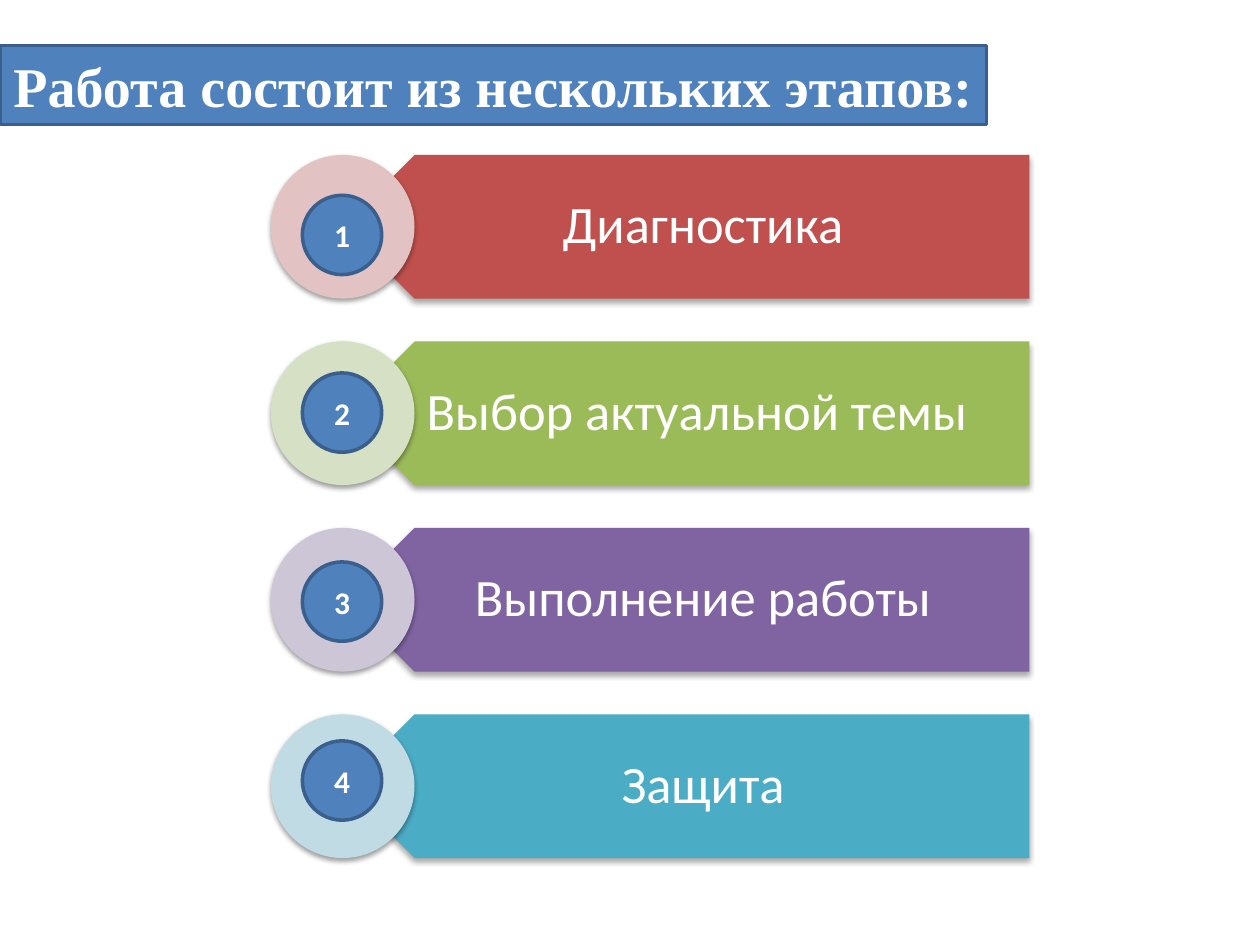
from dataclasses import dataclass

from lxml import etree
from pptx import Presentation
from pptx.dml.color import RGBColor
from pptx.enum.shapes import MSO_SHAPE
from pptx.enum.text import MSO_ANCHOR, PP_ALIGN
from pptx.oxml.ns import qn
from pptx.util import Inches, Pt

RECTANGLE = MSO_SHAPE.RECTANGLE
PENTAGON = MSO_SHAPE.PENTAGON
OVAL = MSO_SHAPE.OVAL
MIDDLE = MSO_ANCHOR.MIDDLE
CENTER = PP_ALIGN.CENTER


@dataclass(frozen=True)
class Theme:
    accent: str = "4F81BD"
    accent_line: str = "3A5F8C"
    text: str = "FFFFFF"
    shadow: str = "000000"
    title_font: str = "Times New Roman"
    body_font: str = "Calibri"
    title_size: int = 32
    stage_size: int = 30
    number_size: int = 18


# label, bar colour, disc colour, top of the number badge
STAGES = [
    ("Диагностика", "C0504D", "E2C2C2", 1.55),
    ("Выбор актуальной темы ", "9BBB59", "D5E0C4", 2.96),
    ("Выполнение работы", "8064A2", "CDC6D7", 4.46),
    ("Защита", "4BACC6", "C1DBE5", 5.88),
]
FIRST_TOP = 1.23
PITCH = 1.48
BAR_LEFT, BAR_WIDTH, BAR_HEIGHT = 2.72, 5.45, 1.14
DISC_LEFT = BAR_LEFT - BAR_HEIGHT / 2
BADGE_LEFT, BADGE_SIZE = 2.4, 0.63


class SlideBuilder:
    def __init__(self, slide, theme):
        self.slide = slide
        self.theme = theme

    def shape(self, kind, box, fill, line=None):
        shape = self.slide.shapes.add_shape(kind, *map(Inches, box))
        shape.fill.solid()
        shape.fill.fore_color.rgb = RGBColor.from_string(fill)
        if line:
            shape.line.color.rgb = RGBColor.from_string(line)
            shape.line.width = Pt(2)
        else:
            shape.line.fill.background()
        shape.shadow.inherit = False
        return shape

    def drop_shadow(self, shape, distance, opacity):
        """Cast a soft shadow straight down; opacity is in percent."""
        effects = shape._element.spPr.find(qn("a:effectLst"))
        shadow = etree.SubElement(
            effects, qn("a:outerShdw"), blurRad=str(Pt(3.1)),
            dist=str(Pt(distance)), dir="5400000", rotWithShape="0")
        color = etree.SubElement(shadow, qn("a:srgbClr"), val=self.theme.shadow)
        etree.SubElement(color, qn("a:alpha"), val=str(opacity * 1000))

    def set_text(self, shape, text, font, size, bold=False):
        """Put one centred line of text in the shape and return its paragraph."""
        frame = shape.text_frame
        frame.text = text
        frame.vertical_anchor = MIDDLE
        paragraph = frame.paragraphs[0]
        paragraph.alignment = CENTER
        for run in paragraph.runs:
            run.font.name = font
            run.font.size = Pt(size)
            run.font.bold = bold
            run.font.color.rgb = RGBColor.from_string(self.theme.text)
        return paragraph

    def title(self, text):
        theme = self.theme
        banner = self.shape(RECTANGLE, (0, 0.36, 7.83, 0.63), theme.accent, theme.accent_line)
        self.set_text(banner, text, theme.title_font, theme.title_size, bold=True)
        banner.text_frame.word_wrap = False

    def label(self, text, box):
        text_box = self.slide.shapes.add_textbox(*map(Inches, box))
        frame = text_box.text_frame
        frame.word_wrap = True
        frame.margin_left, frame.margin_right = Inches(0.5), Inches(0.23)
        frame.margin_top = frame.margin_bottom = Inches(0.12)
        paragraph = self.set_text(text_box, text, self.theme.body_font, self.theme.stage_size)
        paragraph.line_spacing = 0.9

    def stage(self, text, top, bar_color, disc_color):
        box = (BAR_LEFT, top, BAR_WIDTH, BAR_HEIGHT)
        bar = self.shape(PENTAGON, box, bar_color)
        bar.rotation = 180
        self.drop_shadow(bar, distance=1.8, opacity=35)
        self.label(text, box)
        disc = self.shape(OVAL, (DISC_LEFT, top, BAR_HEIGHT, BAR_HEIGHT), disc_color)
        self.drop_shadow(disc, distance=1.6, opacity=38)

    def badge(self, number, top):
        theme = self.theme
        badge = self.shape(OVAL, (BADGE_LEFT, top, BADGE_SIZE, BADGE_SIZE),
                           theme.accent, theme.accent_line)
        self.set_text(badge, str(number), theme.body_font, theme.number_size, bold=True)


def main():
    presentation = Presentation()
    presentation.slide_width = Inches(10)
    presentation.slide_height = Inches(7.5)
    slide = presentation.slides.add_slide(presentation.slide_layouts[6])
    builder = SlideBuilder(slide, Theme())

    builder.title("Работа состоит из нескольких этапов:")
    for index, (text, bar_color, disc_color, badge_top) in enumerate(STAGES):
        builder.stage(text, FIRST_TOP + index * PITCH, bar_color, disc_color)
        builder.badge(index + 1, badge_top)

    presentation.save("out.pptx")


if __name__ == "__main__":
    main()
